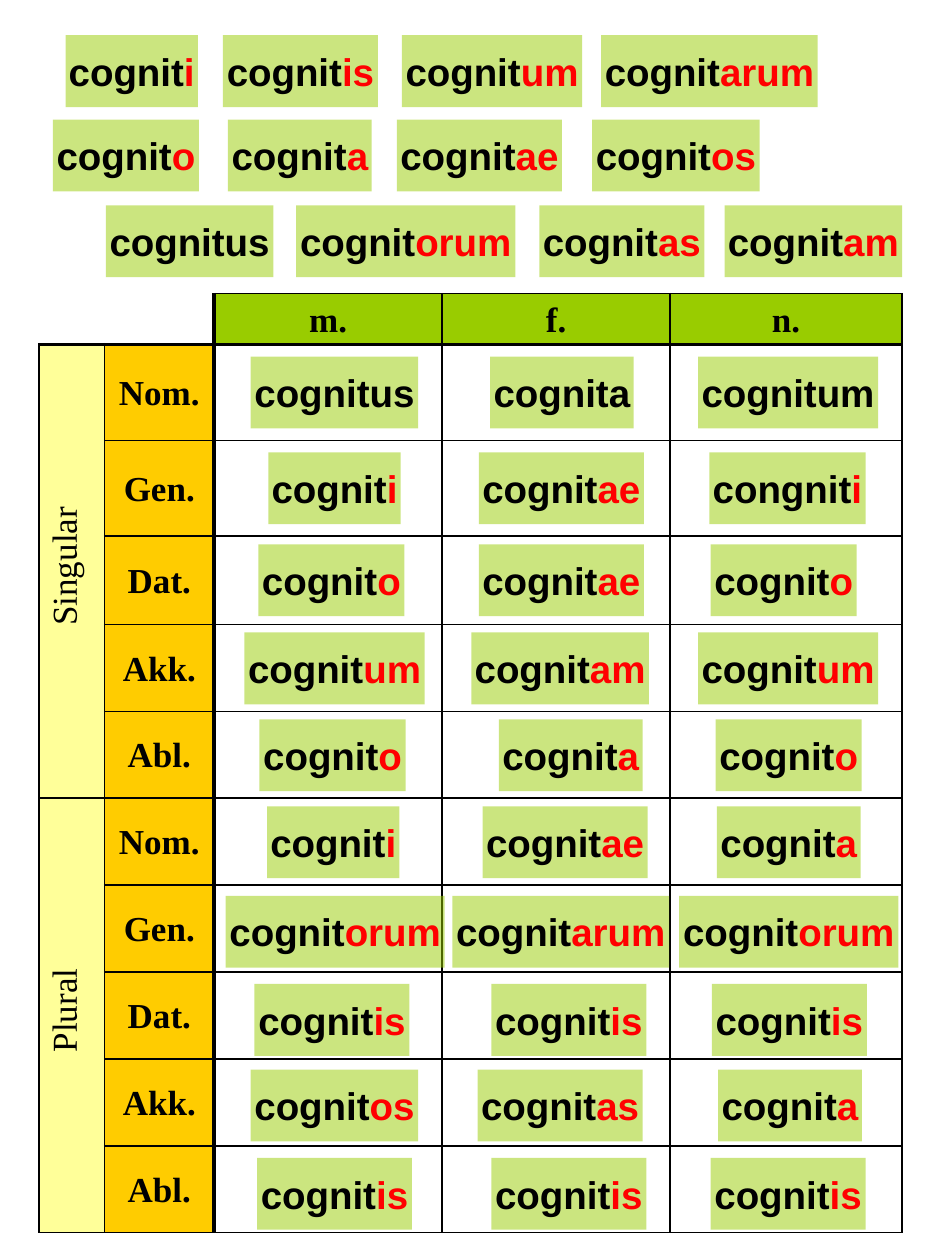
from lxml.etree import SubElement
from pptx import Presentation
from pptx.dml.color import RGBColor
from pptx.enum.shapes import MSO_SHAPE
from pptx.enum.text import MSO_ANCHOR, MSO_AUTO_SIZE, PP_ALIGN
from pptx.oxml.ns import qn
from pptx.util import Inches, Pt

COLORS = {
    "text": "000000",
    "ending": "FF0000",
    "green": "99CC00",
    "orange": "FFCC00",
    "yellow": "FFFF99",
}
GENDERS = ["m.", "f.", "n."]
NUMBERS = ["Singular", "Plural"]
CASES = ["Nom.", "Gen.", "Dat.", "Akk.", "Abl."]
COLUMN_WIDTHS = [0.52, 0.87, 1.81, 1.81, 1.84]
ROW_HEIGHTS = [0.4, 0.76, 0.76, 0.7] + [0.69] * 7
THIN, THICK = 1, 2.25

CARD_HEIGHT = 0.57
CARD_WIDTHS = {
    "cognitus": 1.33, "cognita": 1.14, "cognitum": 1.43, "cogniti": 1.05,
    "congniti": 1.24, "cognito": 1.16, "cognitae": 1.31, "cognitam": 1.41,
    "cognitis": 1.23, "cognitos": 1.33, "cognitas": 1.31,
    "cognitarum": 1.72, "cognitorum": 1.74,
}
CARD_ROWS = [
    (0.28, [("cognit|i", 0.52), ("cognit|is", 1.77), ("cognit|um", 3.19), ("cognit|arum", 4.77)]),
    (0.95, [("cognit|o", 0.42), ("cognit|a", 1.81), ("cognit|ae", 3.15), ("cognit|os", 4.7)]),
    (1.63, [("cognitus", 0.84), ("cognit|orum", 2.35), ("cognit|as", 4.28), ("cognit|am", 5.75)]),
    (2.83, [("cognitus", 1.99), ("cognita", 3.89), ("cognitum", 5.54)]),
    (3.59, [("cognit|i", 2.13), ("cognit|ae", 3.8), ("congnit|i", 5.63)]),
    (4.32, [("cognit|o", 2.05), ("cognit|ae", 3.8), ("cognit|o", 5.64)]),
    (5.02, [("cognit|um", 1.94), ("cognit|am", 3.74), ("cognit|um", 5.54)]),
    (5.71, [("cognit|o", 2.06), ("cognit|a", 3.96), ("cognit|o", 5.68)]),
    (6.4, [("cognit|i", 2.12), ("cognit|ae", 3.83), ("cognit|a", 5.69)]),
    (7.11, [("cognit|orum", 1.79), ("cognit|arum", 3.59), ("cognit|orum", 5.39)]),
    (7.81, [("cognit|is", 2.02), ("cognit|is", 3.9), ("cognit|is", 5.65)]),
    (8.49, [("cognit|os", 1.99), ("cognit|as", 3.79), ("cognit|a", 5.7)]),
    (9.19, [("cognit|is", 2.04), ("cognit|is", 3.9), ("cognit|is", 5.64)]),
]


class DeclensionSheet:
    label_font, label_size = "Times New Roman", 20
    card_font, card_size = "Arial", 22

    def __init__(self, slide):
        self.slide = slide

    def color(self, name):
        return RGBColor.from_string(COLORS[name])

    def border(self, cell, side, width):
        properties = cell._tc.get_or_add_tcPr()
        line = SubElement(properties, qn(f"a:ln{side}"), w=str(Pt(width or 0)))
        if width:
            fill = SubElement(line, qn("a:solidFill"))
            SubElement(fill, qn("a:srgbClr"), val=COLORS["text"])
        else:
            SubElement(line, qn("a:noFill"))

    def borders(self, cell, row, column):
        corner = row == 0 and column < 2
        widths = {
            "L": None if corner else THICK if column == 2 else THIN,
            "R": THICK if corner or column == 1 else THIN,
            "T": None if corner else THICK if row == 1 else THIN,
            "B": THICK if row == 0 else THIN,
        }
        for side, width in widths.items():
            self.border(cell, side, width)

    def label(self, cell, text, fill, vertical=False):
        cell.fill.solid()
        cell.fill.fore_color.rgb = self.color(fill)
        cell.vertical_anchor = MSO_ANCHOR.MIDDLE
        cell.margin_left = cell.margin_right = Inches(0.06)
        cell.margin_top = cell.margin_bottom = Inches(0.03)
        cell.text = text
        paragraph = cell.text_frame.paragraphs[0]
        paragraph.alignment = PP_ALIGN.CENTER
        paragraph.line_spacing = 1.07
        font = paragraph.font
        font.name, font.size, font.bold = self.label_font, Pt(self.label_size), not vertical
        font.color.rgb = self.color("text")
        if vertical:
            cell._tc.get_or_add_tcPr().set("vert", "vert270")
            paragraph._p.get_or_add_pPr().set("marL", str(Inches(0.08)))

    def table(self, left, top):
        frame = self.slide.shapes.add_table(
            len(ROW_HEIGHTS), len(COLUMN_WIDTHS), Inches(left), Inches(top),
            Inches(sum(COLUMN_WIDTHS)), Inches(sum(ROW_HEIGHTS)))
        table = frame.table
        table.first_row = table.horz_banding = False
        for column, width in zip(table.columns, COLUMN_WIDTHS):
            column.width = Inches(width)
        for row, height in zip(table.rows, ROW_HEIGHTS):
            row.height = Inches(height)
        for row in range(len(ROW_HEIGHTS)):
            for column in range(len(COLUMN_WIDTHS)):
                cell = table.cell(row, column)
                self.borders(cell, row, column)
                cell.fill.background()

        table.cell(0, 0).merge(table.cell(0, 1))
        for column, gender in enumerate(GENDERS, start=2):
            self.label(table.cell(0, column), gender, "green")
        for index, number in enumerate(NUMBERS):
            first = 1 + index * len(CASES)
            number_cell = table.cell(first, 0)
            number_cell.merge(table.cell(first + len(CASES) - 1, 0))
            self.label(number_cell, number, "yellow", vertical=True)
            for row, case in enumerate(CASES, start=first):
                self.label(table.cell(row, 1), case, "orange")

    def card(self, word, left, top):
        stem, _, ending = word.partition("|")
        shape = self.slide.shapes.add_shape(
            MSO_SHAPE.RECTANGLE, Inches(left), Inches(top),
            Inches(CARD_WIDTHS[stem + ending]), Inches(CARD_HEIGHT))
        shape.shadow.inherit = False
        shape.line.fill.background()
        shape.fill.solid()
        shape.fill.fore_color.rgb = self.color("green")
        fill_color = shape._element.spPr.find(qn("a:solidFill")).find(qn("a:srgbClr"))
        SubElement(fill_color, qn("a:alpha"), val="50000")

        frame = shape.text_frame
        frame.word_wrap = False
        frame.auto_size = MSO_AUTO_SIZE.SHAPE_TO_FIT_TEXT
        frame.vertical_anchor = MSO_ANCHOR.TOP
        frame.margin_left = frame.margin_right = Inches(0.02)
        frame.margin_top = frame.margin_bottom = Inches(0.1)
        paragraph = frame.paragraphs[0]
        paragraph.alignment = PP_ALIGN.CENTER
        font = paragraph.font
        font.name, font.size, font.bold = self.card_font, Pt(self.card_size), True
        for text, color in ((stem, "text"), (ending, "ending")):
            if text:
                run = paragraph.add_run()
                run.text = text
                run.font.color.rgb = self.color(color)


def main():
    presentation = Presentation()
    presentation.slide_width = Inches(7.5)
    presentation.slide_height = Inches(10)
    sheet = DeclensionSheet(presentation.slides.add_slide(presentation.slide_layouts[6]))
    sheet.table(0.31, 2.33)
    for top, cards in CARD_ROWS:
        for word, left in cards:
            sheet.card(word, left, top)
    presentation.save("out.pptx")


if __name__ == "__main__":
    main()
